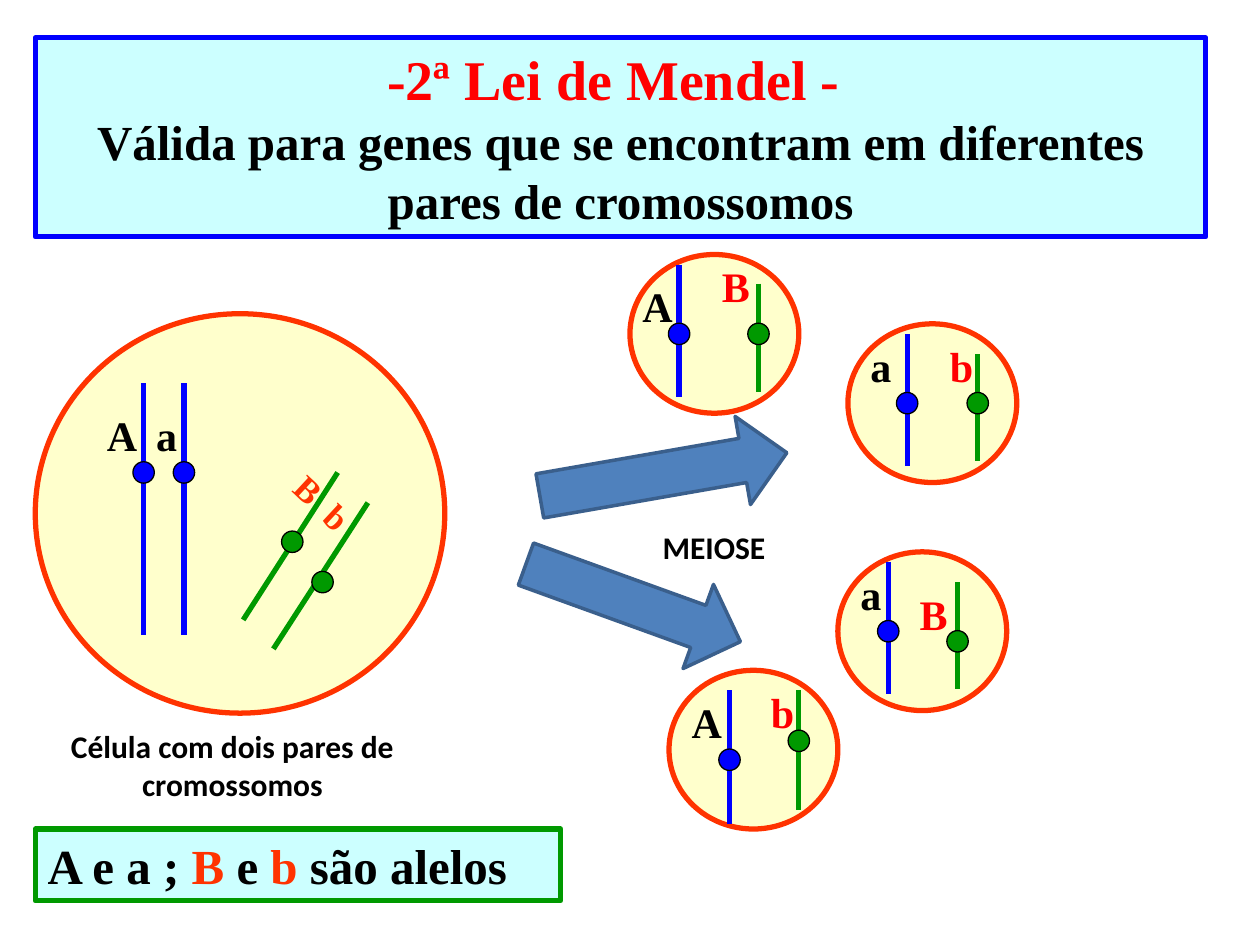
"""Build a slide on Mendel's second law: one cell, meiosis and four gametes."""
from lxml import etree
from pptx import Presentation
from pptx import util as u
from pptx.dml.color import RGBColor
from pptx.enum import shapes, text
from pptx.oxml import ns

BLACK = RGBColor(0, 0, 0)
RED = RGBColor(255, 0, 0)
ORANGE = RGBColor(255, 51, 0)
BLUE = RGBColor(0, 0, 255)
GREEN = RGBColor(0, 153, 0)
AQUA = RGBColor(204, 255, 255)
CREAM = RGBColor(255, 255, 204)
STEEL = RGBColor(79, 129, 189)
NAVY = RGBColor(58, 95, 140)
SHAPE = shapes.MSO_SHAPE
CENTER = text.PP_ALIGN.CENTER
SERIF = "Times New Roman"

deck = Presentation()
deck.slide_width, deck.slide_height = u.Inches(10), u.Inches(7.5)
page = deck.slides.add_slide(deck.slide_layouts[6])
COL = deck.slide_width / 100
ROW = deck.slide_height / 75


def draw(kind, left, top, width, height, fill, line, weight=3, turn=0):
    """Add a filled preset shape placed in grid columns and rows."""
    shape = page.shapes.add_shape(kind, round(left * COL), round(top * ROW),
                                  round(width * COL), round(height * ROW))
    shape.shadow.inherit = False
    shape.fill.solid()
    shape.fill.fore_color.rgb = fill
    shape.line.color.rgb = line
    shape.line.width = u.Pt(weight)
    shape.rotation = turn
    return shape


def write(words, box=None, at=None, size=24, color=BLACK, font=SERIF,
          align=text.PP_ALIGN.LEFT, wrap=False, turn=0, first=True):
    """Write one paragraph of (text, colour) spans, or plain text, in a box."""
    if box is None:
        left, top, width, height = at
        box = page.shapes.add_textbox(round(left * COL), round(top * ROW),
                                      round(width * COL), round(height * ROW))
        box.rotation = turn
    frame = box.text_frame
    frame.word_wrap = wrap
    frame.vertical_anchor = text.MSO_ANCHOR.TOP
    para = frame.paragraphs[0] if first else frame.add_paragraph()
    para.alignment = align
    for part, shade in [(words, color)] if isinstance(words, str) else words:
        span = para.add_run()
        span.text = part
        span.font.name = font
        span.font.size = u.Pt(size)
        span.font.bold = True
        span.font.color.rgb = shade


title = draw(SHAPE.RECTANGLE, 2.8, 3, 92.9, 15.8, AQUA, BLUE)
write("-2ª Lei de Mendel - ", box=title, size=32, color=RED, align=CENTER, wrap=True)
write("Válida para genes que se encontram em diferentes pares de cromossomos",
      box=title, size=28, align=CENTER, wrap=True, first=False)

draw(SHAPE.OVAL, 2.8, 24.9, 32.5, 31.7, CREAM, ORANGE)
chromosomes = [
    (11.4, 30.4, 11.4, 50.4, 11.4, 37.5, BLUE),
    (14.6, 30.4, 14.6, 50.4, 14.6, 37.5, BLUE),
    (26.8, 37.5, 19.3, 49.2, 23.2, 43, GREEN),
    (29.2, 39.9, 21.7, 51.5, 25.6, 46.2, GREEN),
]
letters = [
    ("A", 7.5, 32, BLACK, 24, 0),
    ("a", 11.4, 32, BLACK, 24, 0),
    ("b", 25, 38.9, ORANGE, 20, 42.9),
    ("B", 22.6, 36.7, ORANGE, 20, 42.9),
]

gametes = [
    (50, 20.2, [("A", 0, 1.6, 3.9, 0.8, 11.3, 6.3), ("B", 6.3, 0, 10.2, 2.3, 10.9, 6.3)]),
    (67.3, 25.7, [("a", 0.8, 0.8, 4.7, 0.8, 11.3, 6.3), ("b", 7.1, 0.8, 10.3, 2.4, 10.9, 6.3)]),
    (66.5, 43.8, [("a", 0.8, 0.8, 4, 0.8, 11.3, 6.3), ("B", 5.5, 2.4, 9.5, 2.4, 10.9, 7.1)]),
    (53.1, 53.2, [("A", 0.8, 1.6, 4.8, 1.6, 12.2, 7.1), ("b", 7.1, 0.8, 10.3, 1.6, 11.1, 5.6)]),
]
for left, top, alleles in gametes:
    draw(SHAPE.OVAL, left, top, 13.4, 12.6, CREAM, ORANGE)
    for letter, across, down, strand, start, end, dot in alleles:
        x = left + strand
        chromosomes.append((x, top + start, x, top + end, x, top + dot,
                            BLUE if letter in "Aa" else GREEN))
        letters.append((letter, left + across, top + down,
                        BLACK if letter in "Aa" else RED, 24, 0))

for x1, y1, x2, y2, dot_x, dot_y, color in chromosomes:
    strand = page.shapes.add_connector(
        shapes.MSO_CONNECTOR.STRAIGHT, round(x1 * COL), round(y1 * ROW),
        round(x2 * COL), round(y2 * ROW))
    strand.line.color.rgb = color
    strand.line.width = u.Pt(3)
    etree.SubElement(strand._element.spPr, ns.qn("a:effectLst"))
    draw(SHAPE.OVAL, dot_x - 0.85, dot_y - 0.85, 1.7, 1.7, color, BLACK, weight=0.75)

for letter, left, top, color, size, turn in letters:
    width = {"a": 3.7, "A": 4.5, "b": 3.6, "B": 3.9}[letter] if turn or letter == "a" else 4.5
    write(letter, at=(left, top, width, 4.4 if turn else 5), size=size, color=color, turn=turn)

for left, top, width, turn in [(42.7, 34.1, 19.9, 350.1), (41.2, 44.3, 18.1, 19.9)]:
    draw(SHAPE.RIGHT_ARROW, left, top, width, 7.1, STEEL, NAVY, weight=2, turn=turn)

write("Célula com dois pares de cromossomos", at=(4.3, 57.2, 28.3, 7.1),
      size=18, font="Calibri", align=CENTER, wrap=True)
write("MEIOSE", at=(51.6, 41.4, 11.8, 4), size=18, font="Calibri", wrap=True)

legend = draw(SHAPE.RECTANGLE, 2.8, 65.8, 41.7, 5.7, AQUA, GREEN)
write([("A e a ; ", BLACK), ("B", ORANGE), (" e", BLACK), (" b ", ORANGE),
       ("são alelos", BLACK)], box=legend, size=28, wrap=True)

deck.save("out.pptx")
